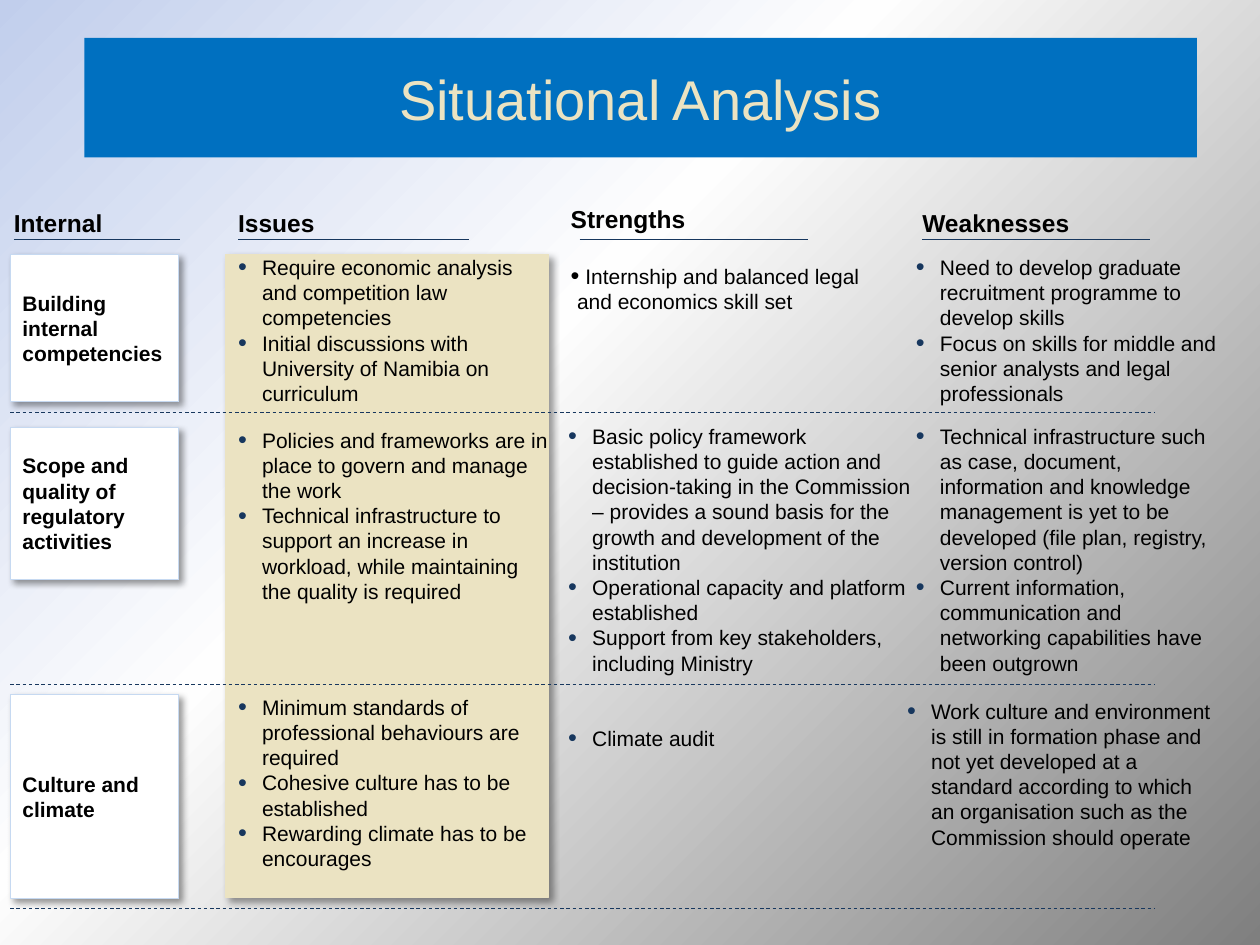
from pptx import Presentation
from pptx.dml.color import RGBColor
from pptx.enum.dml import MSO_LINE
from pptx.enum.shapes import MSO_CONNECTOR, MSO_SHAPE
from pptx.enum.text import MSO_ANCHOR, MSO_AUTO_SIZE, PP_ALIGN
from pptx.oxml import parse_xml
from pptx.oxml.ns import nsdecls
from pptx.util import Inches, Pt

RECT, STRAIGHT, DASH = MSO_SHAPE.RECTANGLE, MSO_CONNECTOR.STRAIGHT, MSO_LINE.DASH
MIDDLE, GROW, FIXED = MSO_ANCHOR.MIDDLE, MSO_AUTO_SIZE.SHAPE_TO_FIT_TEXT, MSO_AUTO_SIZE.NONE
LEFT, CENTER = PP_ALIGN.LEFT, PP_ALIGN.CENTER

THEME = {
    "blue": "0070C0", "sand": "EBE3C2", "navy": "17375E", "white": "FFFFFF",
    "edge": "C6D9F1", "black": "000000",
    "back": [(0, "C1CEEC"), (40, "FEFEFE"), (100, "7F7F7F")],
    "title": {"name": "Arial", "size": Pt(32), "bold": False},
    "head": {"name": "Arial", "size": Pt(14), "bold": True},
    "label": {"name": "Arial", "size": Pt(12), "bold": True},
    "body": {"name": "Arial", "size": Pt(12), "bold": False},
}


def write(frame, lines, style, color="black", align=LEFT, dot=None, hang=0.19):
    """Fill a text frame with paragraphs; dot is the bullet colour, if any."""
    frame.word_wrap = True
    for num, line in enumerate(lines):
        para = frame.paragraphs[0] if num == 0 else frame.add_paragraph()
        para.alignment = align
        if dot:
            props = para._p.get_or_add_pPr()
            props.set("marL", str(Inches(hang)))
            props.set("indent", str(-Inches(hang)))
            for tag in (f'<a:buClr {nsdecls("a")}><a:srgbClr val="{THEME[dot]}"/></a:buClr>',
                        f'<a:buSzPct {nsdecls("a")} val="120000"/>',
                        f'<a:buFont {nsdecls("a")} typeface="Arial"/>',
                        f'<a:buChar {nsdecls("a")} char="•"/>'):
                props.append(parse_xml(tag))
        run = para.add_run()
        run.text = line
        for key, value in THEME[style].items():
            setattr(run.font, key, value)
        run.font.color.rgb = RGBColor.from_string(THEME[color])


prs = Presentation()
prs.slide_width, prs.slide_height = Inches(10), Inches(7.5)
slide = prs.slides.add_slide(prs.slide_layouts[5])
shapes = slide.shapes

# Background
stops = "".join(f'<a:gs pos="{pos * 1000}"><a:srgbClr val="{color}"/></a:gs>'
                for pos, color in THEME["back"])
slide._element.cSld.insert(0, parse_xml(
    f'<p:bg {nsdecls("p", "a")}><p:bgPr><a:gradFill rotWithShape="1"><a:gsLst>{stops}</a:gsLst>'
    '<a:lin ang="2700000" scaled="0"/></a:gradFill><a:effectLst/></p:bgPr></p:bg>'))

# Title
title = shapes.title
title.left, title.top, title.width, title.height = map(Inches, (0.67, 0.3, 8.83, 0.95))
title.fill.solid()
title.fill.fore_color.rgb = RGBColor.from_string(THEME["blue"])
title.text_frame.auto_size = FIXED
title.text_frame.vertical_anchor = MIDDLE
write(title.text_frame, ["Situational Analysis"], "title", "sand", CENTER)

# Issues panel and row cards
cards = [
    ((1.79, 2.02, 2.56, 5.1), "sand", "sand", None),
    ((0.08, 2.02, 1.34, 1.17), "white", "edge", "Building internal competencies"),
    ((0.08, 3.39, 1.34, 1.21), "white", "edge", "Scope and quality of regulatory activities"),
    ((0.08, 5.51, 1.34, 1.62), "white", "edge", "Culture and climate"),
]
for at, fill, edge, label in cards:
    card = shapes.add_shape(RECT, *map(Inches, at))
    card.fill.solid()
    card.fill.fore_color.rgb = RGBColor.from_string(THEME[fill])
    card.line.color.rgb = RGBColor.from_string(THEME[edge])
    card.line.width = Pt(0.5)
    card.shadow.inherit = False
    card._element.spPr.find("{*}effectLst").append(parse_xml(
        f'<a:outerShdw {nsdecls("a")} blurRad="{Pt(4)}" dist="{Pt(3)}" dir="2700000" algn="tl" '
        f'rotWithShape="0"><a:srgbClr val="{THEME["black"]}"><a:alpha val="40000"/></a:srgbClr>'
        '</a:outerShdw>'))
    if label:
        card.text_frame.vertical_anchor = MIDDLE
        write(card.text_frame, [label], "label")

# Rules under the headings and between the rows
rules = [(0.11, 1.43, 1.9, None), (1.89, 3.72, 1.9, None),
         (4.6, 6.41, 1.9, None), (7.32, 9.13, 1.9, None)]
rules += [(0.08, 9.17, y, DASH) for y in (3.27, 5.43, 7.21)]
for start, end, y, dash in rules:
    rule = shapes.add_connector(STRAIGHT, *map(Inches, (start, y, end, y)))
    rule.line.color.rgb = RGBColor.from_string(THEME["navy"])
    rule.line.width = Pt(0.5)
    if dash:
        rule.line.dash_style = dash
    rule._element.spPr.append(parse_xml(f'<a:effectLst {nsdecls("a")}/>'))

# Headings and lists
head = {"style": "head"}
points = {"style": "body", "dot": "navy"}
skills = {"style": "body", "dot": "black", "hang": 0.05}
texts = [
    ((0.11, 1.65, 1.76, 0.24), head, ["Internal"]),
    ((1.89, 1.65, 2.46, 0.24), head, ["Issues"]),
    ((4.53, 1.62, 2.46, 0.24), head, ["Strengths"]),
    ((7.32, 1.65, 2.46, 0.24), head, ["Weaknesses"]),
    ((1.89, 2.02, 2.46, 1.21), points, [
        "Require economic analysis and competition law competencies",
        "Initial discussions with University of Namibia on curriculum"]),
    ((1.89, 3.39, 2.46, 1.41), points, [
        "Policies and frameworks are in place to govern and manage the work",
        "Technical infrastructure to support an increase in workload, "
        "while maintaining the quality is required"]),
    ((1.89, 5.51, 2.46, 1.41), points, [
        "Minimum standards of professional behaviours are required",
        "Cohesive culture has to be established",
        "Rewarding climate has to be encourages"]),
    ((4.53, 2.09, 2.46, 0.4), skills, [
        " Internship and balanced legal and economics skill set"]),
    ((4.51, 3.36, 2.76, 2.02), points, [
        "Basic policy framework established to guide action and decision-taking in the "
        "Commission – provides a sound basis for the growth and development of the institution",
        "Operational capacity and platform established",
        "Support from key stakeholders, including Ministry"]),
    ((4.51, 5.76, 2.76, 0.2), points, ["Climate audit"]),
    ((7.27, 2.02, 2.46, 1.21), points, [
        "Need to develop graduate recruitment programme to develop skills",
        "Focus on skills for middle and senior analysts and legal professionals"]),
    ((7.27, 3.36, 2.46, 2.02), points, [
        "Technical infrastructure such as case, document, information and knowledge "
        "management is yet to be developed (file plan, registry, version control)",
        "Current information, communication and networking capabilities have been outgrown"]),
    ((7.2, 5.54, 2.46, 1.41), points, [
        "Work culture and environment is still in formation phase and not yet developed at a "
        "standard according to which an organisation such as the Commission should operate"]),
]
for at, form, lines in texts:
    frame = shapes.add_textbox(*map(Inches, at)).text_frame
    for side in ("left", "top", "right", "bottom"):
        setattr(frame, f"margin_{side}", 0)
    frame.auto_size = GROW
    write(frame, lines, **form)

prs.save("out.pptx")
